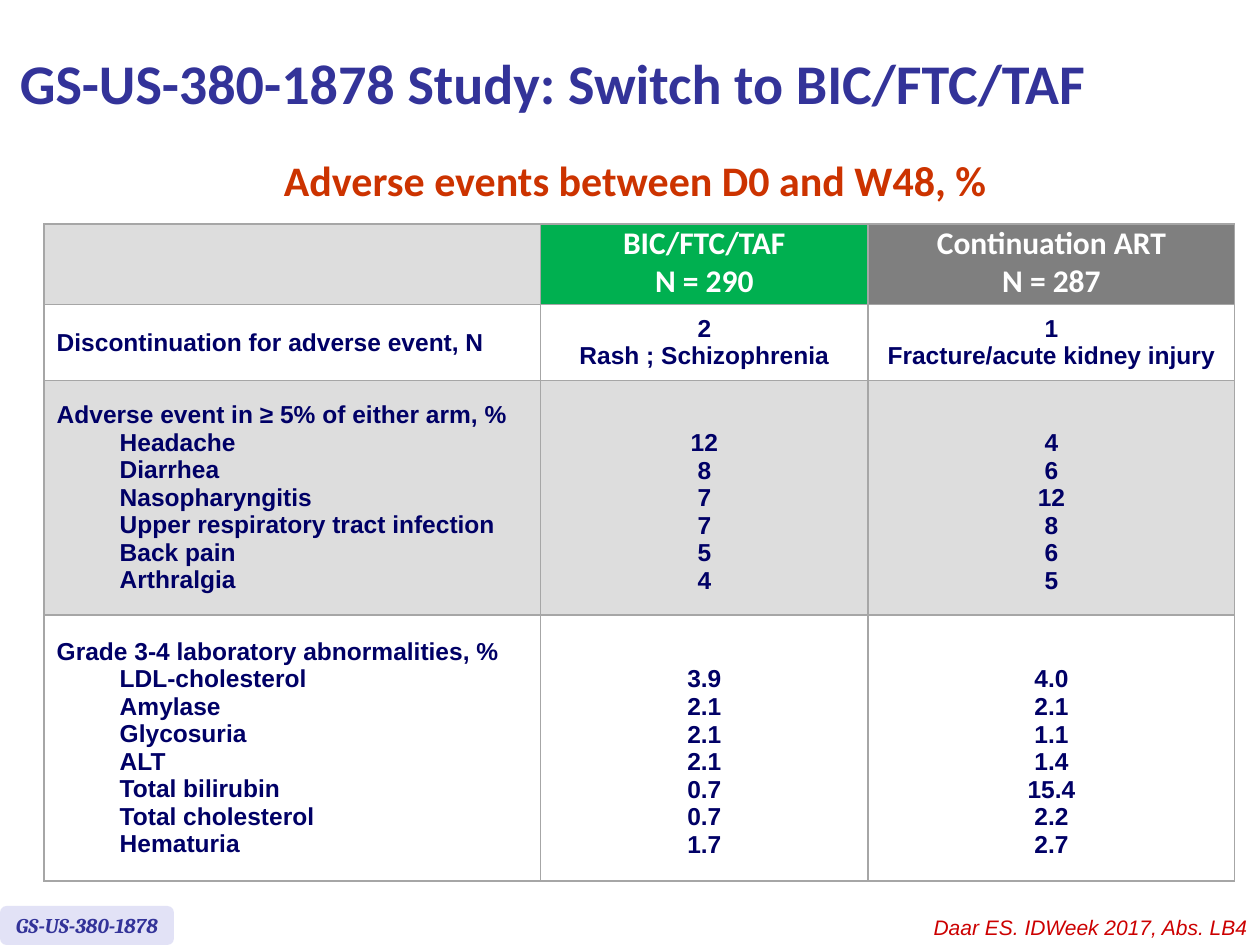
import pptx
import pptx.dml.color
import pptx.enum.shapes
import pptx.enum.text
import pptx.oxml
import pptx.oxml.ns
import pptx.util

Pt = pptx.util.Pt
RGBColor = pptx.dml.color.RGBColor
ALIGN = pptx.enum.text.PP_ALIGN
MIDDLE = pptx.enum.text.MSO_ANCHOR.MIDDLE

INDIGO = RGBColor(0x33, 0x33, 0x99)
LAVENDER = RGBColor(0xE2, 0xE2, 0xF6)
ORANGE = RGBColor(0xCC, 0x33, 0x00)
RED = RGBColor(0xCC, 0x00, 0x00)
NAVY = RGBColor(0x00, 0x00, 0x66)
GREEN = RGBColor(0x00, 0xB0, 0x50)
GRAY = RGBColor(0x7F, 0x7F, 0x7F)
LIGHT = RGBColor(0xDD, 0xDD, 0xDD)
WHITE = RGBColor(0xFF, 0xFF, 0xFF)
BORDER = RGBColor(0xA6, 0xA6, 0xA6)

STUDY = "GS-US-380-1878"
TITLE = f"{STUDY} Study: Switch to BIC/FTC/TAF"
SUBTITLE = "Adverse events between D0 and W48, %"
CITATION = "Daar ES. IDWeek 2017, Abs. LB4"

ARMS = [(["BIC/FTC/TAF", "N = 290"], GREEN), (["Continuation ART", "N = 287"], GRAY)]
DISCONTINUATION = [
    ["Discontinuation for adverse event, N"],
    ["2", "Rash ; Schizophrenia"],
    ["1", "Fracture/acute kidney injury"],
]
GROUPS = [
    ("Adverse event in ≥ 5% of either arm, %", LIGHT, [
        ("Headache", "12", "4"),
        ("Diarrhea", "8", "6"),
        ("Nasopharyngitis", "7", "12"),
        ("Upper respiratory tract infection", "7", "8"),
        ("Back pain", "5", "6"),
        ("Arthralgia", "4", "5"),
    ]),
    ("Grade 3-4 laboratory abnormalities, %", WHITE, [
        ("LDL-cholesterol", "3.9", "4.0"),
        ("Amylase", "2.1", "2.1"),
        ("Glycosuria", "2.1", "1.1"),
        ("ALT", "2.1", "1.4"),
        ("Total bilirubin", "0.7", "15.4"),
        ("Total cholesterol", "0.7", "2.2"),
        ("Hematuria", "1.7", "2.7"),
    ]),
]

COLUMN_WIDTHS = [283.7, 187.2, 209.5]
ROW_HEIGHTS = [46, 43.5, 134, 152]
INSET = 3.6
BODY_LINE = 16

TITLE_FONT = {"name": "Calibri", "size": Pt(32), "bold": True, "color": INDIGO}
SUBTITLE_FONT = {"name": "Calibri", "size": Pt(24), "bold": True, "color": ORANGE}
HEADER_FONT = {"name": "Calibri", "size": Pt(18), "bold": True, "color": WHITE}
BODY_FONT = {"name": "Arial", "size": Pt(14), "bold": True, "color": NAVY}
CITATION_FONT = {"name": "Arial", "size": Pt(12), "italic": True, "color": RED}
TAG_FONT = {"name": "Cambria", "size": Pt(12), "bold": True, "italic": True, "color": INDIGO}


def write(frame, lines, font, align, spacing=None, gap=0, indent=0):
    """Write one paragraph per line; gap and indent apply after the first."""
    for index, line in enumerate(lines):
        para = frame.add_paragraph() if index else frame.paragraphs[0]
        para.alignment = align
        if spacing:
            para.line_spacing = spacing
        if index and gap:
            para.space_before = Pt(gap)
        if index and indent:
            properties = para._p.get_or_add_pPr()
            properties.set("marL", str(Pt(indent)))
            properties.set("indent", "0")
        span = para.add_run()
        span.text = line
        for key, value in font.items():
            if key == "color":
                span.font.color.rgb = value
            else:
                setattr(span.font, key, value)


def add_text(page, area, line, font, align, spacing=None, anchor=None):
    box = page.shapes.add_textbox(*map(Pt, area))
    box.text_frame.word_wrap = True
    if anchor is not None:
        box.text_frame.vertical_anchor = anchor
    write(box.text_frame, [line], font, align, spacing)


def add_borders(cell):
    properties = cell._tc.get_or_add_tcPr()
    for position, side in enumerate(("lnL", "lnR", "lnT", "lnB")):
        properties.insert(position, pptx.oxml.parse_xml(
            f'<a:{side} {pptx.oxml.ns.nsdecls("a")} w="{Pt(1)}"><a:solidFill>'
            f'<a:srgbClr val="{BORDER}"/></a:solidFill></a:{side}>'))


def fill_cell(cell, lines, color, font=BODY_FONT, align=ALIGN.CENTER, top=INSET, **layout):
    cell.fill.solid()
    cell.fill.fore_color.rgb = color
    cell.vertical_anchor = MIDDLE
    cell.margin_top = Pt(top)
    cell.margin_bottom = Pt(INSET)
    write(cell.text_frame, lines, font, align, **layout)
    add_borders(cell)


def add_events_table(page):
    table = page.shapes.add_table(
        len(ROW_HEIGHTS), len(COLUMN_WIDTHS), Pt(25.2), Pt(128),
        Pt(sum(COLUMN_WIDTHS)), Pt(sum(ROW_HEIGHTS))).table
    table.first_row = table.horz_banding = False
    for column, width in zip(table.columns, COLUMN_WIDTHS):
        column.width = Pt(width)
    for row, height in zip(table.rows, ROW_HEIGHTS):
        row.height = Pt(height)

    fill_cell(table.cell(0, 0), [], LIGHT)
    for column, (lines, color) in enumerate(ARMS, 1):
        fill_cell(table.cell(0, column), lines, color, HEADER_FONT, spacing=0.8, gap=3.6)
    for column, lines in enumerate(DISCONTINUATION):
        align = ALIGN.CENTER if column else ALIGN.LEFT
        fill_cell(table.cell(1, column), lines, WHITE, align=align)
    for row, (heading, color, events) in enumerate(GROUPS, 2):
        names, *arm_values = zip(*events)
        fill_cell(table.cell(row, 0), [heading, *names], color, align=ALIGN.LEFT, indent=36)
        for column, values in enumerate(arm_values, 1):
            # The extra top margin keeps values level with the names below the heading
            fill_cell(table.cell(row, column), values, color, top=INSET + BODY_LINE)


def add_study_tag(page):
    tag = page.shapes.add_shape(
        pptx.enum.shapes.MSO_SHAPE.ROUNDED_RECTANGLE, *map(Pt, (0, 517.7, 99.4, 22.3)))
    tag.shadow.inherit = False
    tag.fill.solid()
    tag.fill.fore_color.rgb = LAVENDER
    tag.line.fill.background()
    tag.text_frame.word_wrap = False
    tag.text_frame.vertical_anchor = MIDDLE
    write(tag.text_frame, [STUDY], TAG_FONT, ALIGN.CENTER)


def main():
    deck = pptx.Presentation()
    deck.slide_width, deck.slide_height = Pt(720), Pt(540)
    page = deck.slides.add_slide(deck.slide_layouts[6])
    add_events_table(page)
    add_text(page, (10.8, 98.6, 704.2, 25.2), SUBTITLE, SUBTITLE_FONT, ALIGN.CENTER, Pt(15.2))
    add_text(page, (386, 519, 334, 21.6), CITATION, CITATION_FONT, ALIGN.RIGHT)
    add_study_tag(page)
    add_text(page, (4.3, 3.6, 645, 87), TITLE, TITLE_FONT, ALIGN.LEFT, anchor=MIDDLE)
    deck.save("out.pptx")


if __name__ == "__main__":
    main()
